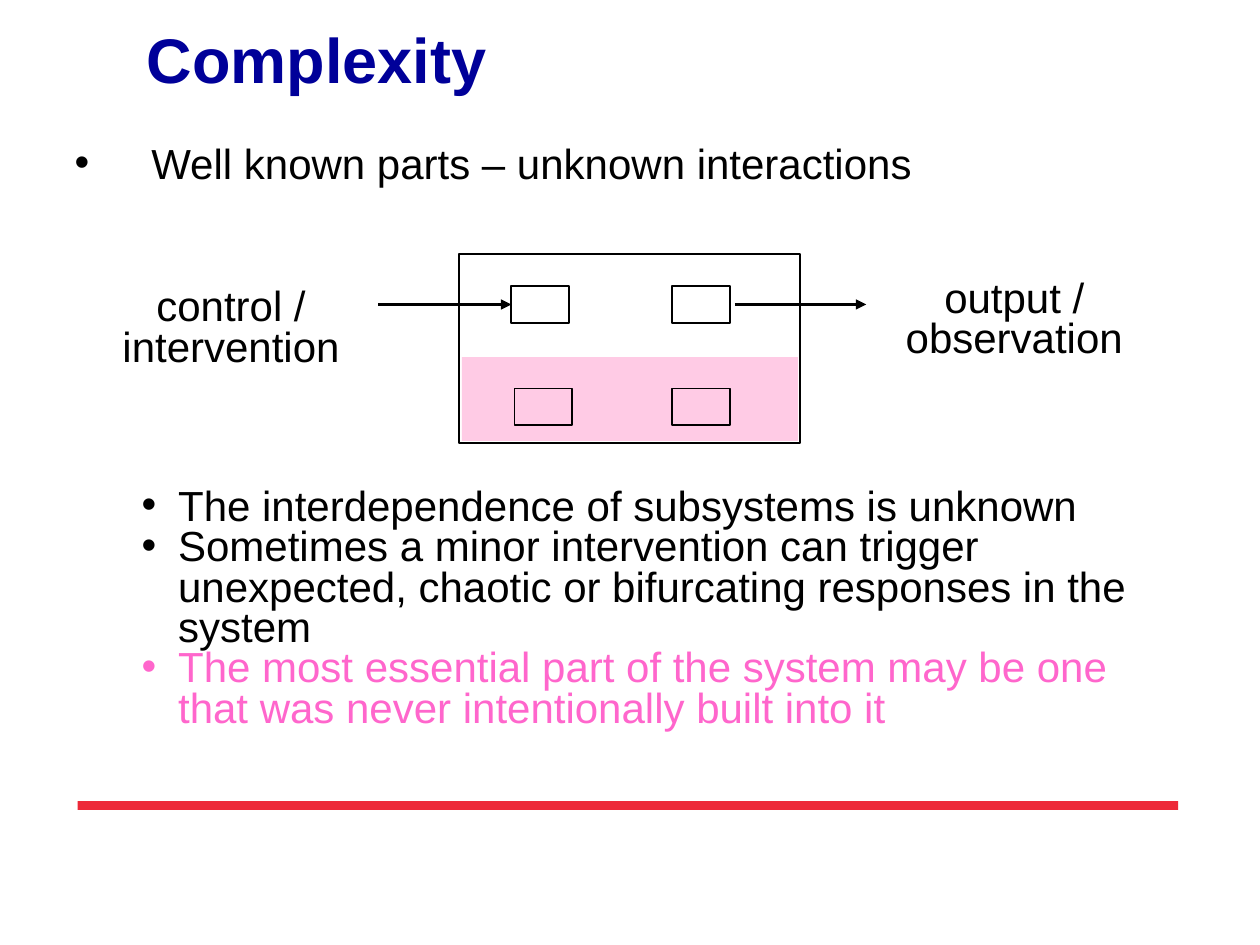
import pptx
import pptx.dml.color
import pptx.enum.shapes
import pptx.enum.text
import pptx.oxml.ns
import pptx.util
from lxml import etree

COLORS = {"ink": "000000", "title": "000099", "accent": "FF66CC",
          "hidden": "FF99CC", "rule": "ED2939"}
BODY = {"name": "Arial", "size": pptx.util.Pt(24)}
TITLE = {"name": "Arial", "size": pptx.util.Pt(36), "bold": True}
ALIGN = pptx.enum.text.PP_ALIGN
PADDING = (0.09, 0.05)


class Deck:
    """Style and current slide; positions are (column, row) on a 120 x 90 grid."""

    def __init__(self, prs):
        self.cell = prs.slide_width / 120
        self.slide = prs.slides.add_slide(prs.slide_layouts[6])

    def grid(self, *cells):
        return [round(c * self.cell) for c in cells]

    def color(self, name):
        return pptx.dml.color.RGBColor.from_string(COLORS[name])

    def child(self, parent, tag, **attrs):
        return etree.SubElement(parent, pptx.oxml.ns.qn(tag), **attrs)

    def rect(self, at, fill=None, alpha=None, line=None):
        sp = self.slide.shapes.add_shape(
            pptx.enum.shapes.MSO_SHAPE.RECTANGLE, *self.grid(*at))
        sp.shadow.inherit = False
        if fill:
            sp.fill.solid()
            sp.fill.fore_color.rgb = self.color(fill)
            if alpha:
                clr = sp.fill._xPr.find(".//" + pptx.oxml.ns.qn("a:srgbClr"))
                self.child(clr, "a:alpha", val=str(alpha * 1000))
        else:
            sp.fill.background()
        if line:
            sp.line.color.rgb = self.color("ink")
            sp.line.width = pptx.util.Pt(line)
        else:
            sp.line.fill.background()
        return sp

    def arrow(self, start, end, target=None):
        cxn = self.slide.shapes.add_connector(
            pptx.enum.shapes.MSO_CONNECTOR.STRAIGHT, *self.grid(*start, *end))
        if target:
            cxn.end_connect(target, 1)
        cxn.line.color.rgb = self.color("ink")
        cxn.line.width = pptx.util.Pt(1.5)
        self.child(cxn.line._get_or_add_ln(), "a:tailEnd", type="triangle")
        self.child(cxn._element.spPr, "a:effectLst")

    def bullet(self, p, color, left, hang):
        pPr = p._p.get_or_add_pPr()
        pPr.set("marL", str(pptx.util.Inches(left)))
        pPr.set("indent", str(-pptx.util.Inches(hang)))
        clr = self.child(pPr, "a:buClr")
        self.child(clr, "a:srgbClr", val=COLORS[color])
        self.child(pPr, "a:buFont", typeface="Arial")
        self.child(pPr, "a:buChar", char="•")

    def text(self, at, lines, font=BODY, padding=(0, 0), spacing=0.8,
             align=ALIGN.LEFT, indent=None):
        """Write (text, colour) lines; indent is (left, hanging) for bullets."""
        tf = self.slide.shapes.add_textbox(*self.grid(*at)).text_frame
        tf.word_wrap = True
        x, y = map(pptx.util.Inches, padding)
        margins = {"margin_left": x, "margin_right": x,
                   "margin_top": y, "margin_bottom": y}
        for key, value in margins.items():
            setattr(tf, key, value)
        for i, (words, color) in enumerate(lines):
            p = tf.add_paragraph() if i else tf.paragraphs[0]
            if indent:
                self.bullet(p, color, *indent)
            p.alignment = align
            p.line_spacing = spacing
            r = p.add_run()
            r.text = words
            for key, value in font.items():
                setattr(r.font, key, value)
            r.font.color.rgb = self.color(color)


def main():
    prs = pptx.Presentation()
    prs.slide_width = pptx.util.Inches(10)
    prs.slide_height = pptx.util.Inches(7.5)
    deck = Deck(prs)

    deck.rect((7.4, 76.3, 104.8, 0.85), fill="rule")
    deck.text((14, 2, 94, 14), [("Complexity", "title")], TITLE, spacing=1.0)
    deck.text((7.1, 14, 108.7, 7),
              [("Well known parts – unknown interactions", "ink")],
              indent=(0.61, 0.61))

    # System with a hidden lower half and four parts
    deck.rect((44, 34, 32, 8), fill="hidden", alpha=50)
    deck.rect((43.7, 24.2, 32.5, 18), line=1.5)
    parts = [deck.rect((col, row, 5.5, 3.5), line=1)
             for col, row in [(48.7, 27.25), (64, 27.25), (49, 37), (64, 37)]]
    deck.arrow((36, 29), (48.7, 29), target=parts[0])
    deck.arrow((70, 29), (82.5, 29))

    labels = [(9, 27, "control /", "intervention"),
              (83.6, 26.2, "output /", "observation")]
    for col, row, *words in labels:
        deck.text((col, row, 26, 7), [(w, "ink") for w in words],
                  padding=PADDING, align=ALIGN.CENTER)

    deck.text((10, 46, 104, 30), [
        ("The interdependence of subsystems is unknown", "ink"),
        ("Sometimes a minor intervention can trigger unexpected, chaotic or "
         "bifurcating responses in the system", "ink"),
        ("The most essential part of the system may be one that was never "
         "intentionally built into it", "accent"),
    ], padding=PADDING, indent=(0.49, 0.29))
    prs.save("out.pptx")


if __name__ == "__main__":
    main()
